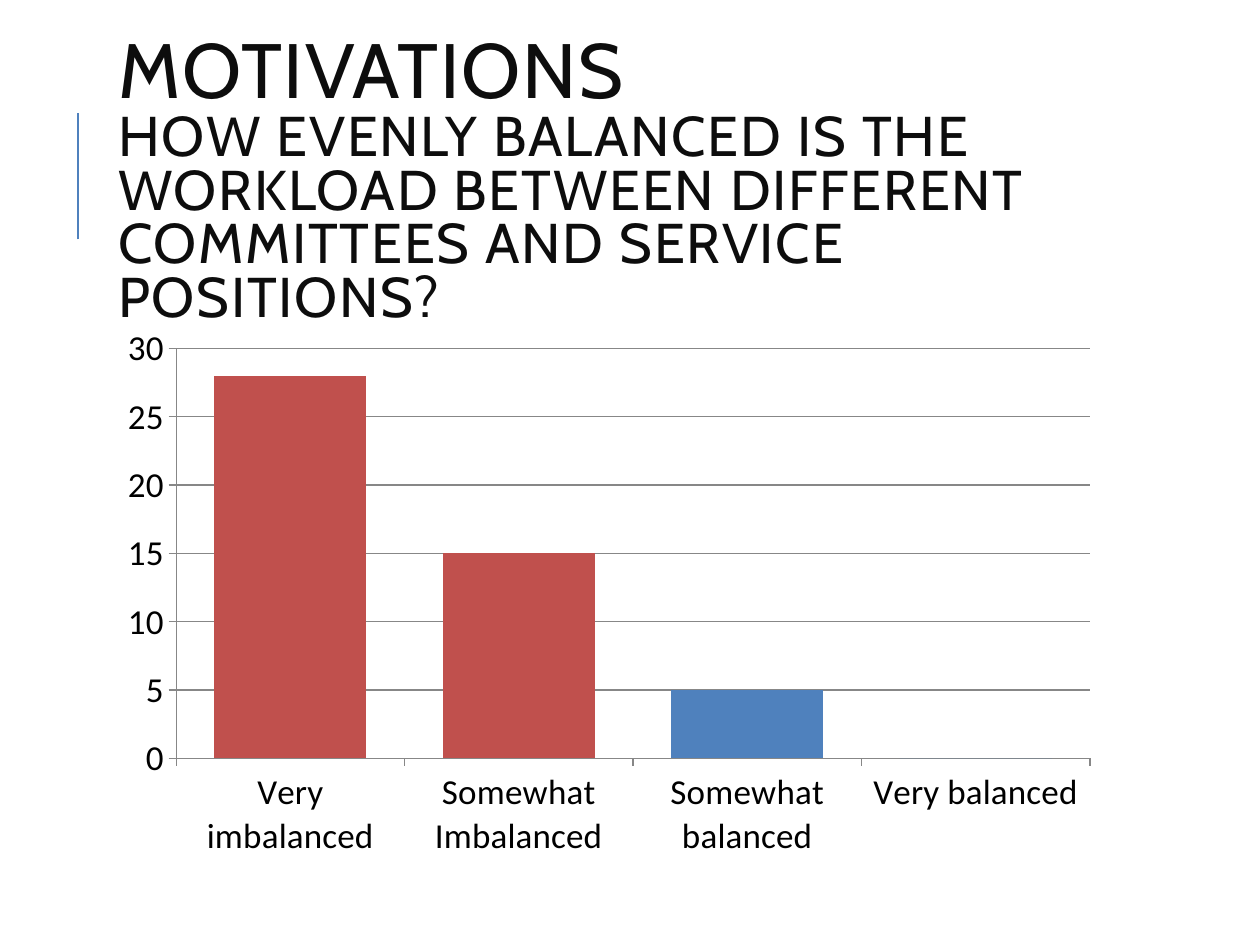
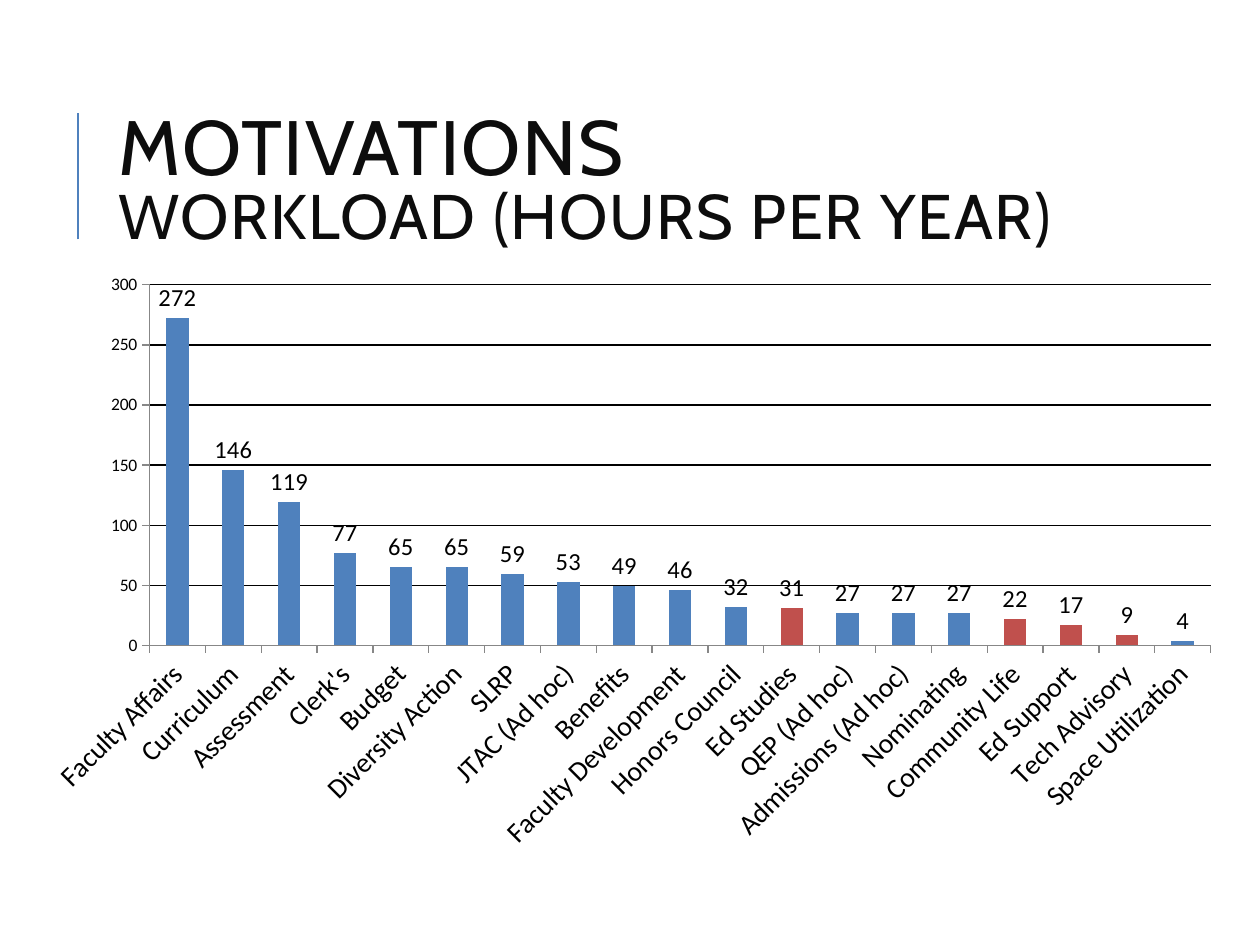
from lxml import etree
from pptx import Presentation
from pptx.chart.data import CategoryChartData
from pptx.dml.color import RGBColor
from pptx.enum import chart as ch, shapes, text
from pptx.oxml import parse_xml
from pptx.oxml.ns import nsdecls, qn
from pptx.util import Inches, Pt

BLUE = RGBColor(0x4F, 0x81, 0xBD)
RED = RGBColor(0xC0, 0x50, 0x4D)
INK = RGBColor(0x0D, 0x0D, 0x0D)
BLACK = RGBColor(0, 0, 0)
GRAY = RGBColor(0x87, 0x87, 0x87)
TITLE_FONT, CHART_FONT = "Cabin", "Calibri"

BALANCE = {
    "Very imbalanced": 28, "Somewhat Imbalanced": 15,
    "Somewhat balanced": 5, "Very balanced": 0,
}
HOURS = {
    "Faculty Affairs": 272, "Curriculum": 146, "Assessment": 119,
    "Clerk's": 77, "Budget": 65, "Diversity Action": 65, "SLRP": 59,
    "JTAC (Ad hoc)": 53, "Benefits": 49, "Faculty Development": 46,
    "Honors Council": 32, "Ed Studies": 31, "QEP (Ad hoc)": 27,
    "Admissions (Ad hoc)": 27, "Nominating": 27, "Community Life": 22,
    "Ed Support": 17, "Tech Advisory": 9, "Space Utilization": 4,
}


def apply(target, **values):
    for name, value in values.items():
        setattr(target, name, value)


def style_font(font, color, **values):
    apply(font, **values)
    font.color.rgb = color


class SlideBuilder:
    """Holds the deck, the shared style and the current slide."""

    def __init__(self):
        self.deck = Presentation()
        apply(self.deck, slide_width=Inches(10), slide_height=Inches(7.5))
        self.page = None

    def new_page(self, subtitle, subtitle_size):
        self.page = self.deck.slides.add_slide(self.deck.slide_layouts[6])
        self.accent_line()
        self.title(subtitle, subtitle_size)

    def accent_line(self):
        x = Inches(0.62)
        line = self.page.shapes.add_connector(
            shapes.MSO_CONNECTOR.STRAIGHT, x, Inches(1.9), x, Inches(0.9))
        line.line.color.rgb = BLUE
        line.line.width = Pt(1.5)
        etree.SubElement(line._element.spPr, qn("a:effectLst"))

    def title(self, subtitle, subtitle_size):
        box = self.page.shapes.add_textbox(
            Inches(0.84), Inches(0.64), Inches(7.97), Inches(1.64))
        frame = box.text_frame
        apply(frame, word_wrap=True, auto_size=text.MSO_AUTO_SIZE.NONE,
              vertical_anchor=text.MSO_ANCHOR.MIDDLE)
        para = frame.paragraphs[0]
        para.line_spacing = 0.8
        self.span(para, "MOTIVATIONS", 44)
        para.add_line_break()
        self.span(para, subtitle, subtitle_size)

    def span(self, para, words, size):
        span = para.add_run()
        span.text = words
        style_font(span.font, INK, name=TITLE_FONT, size=Pt(size))
        span.font._element.set("spc", "100")

    def column_chart(self, values, at, plot, top, step, gap, red,
                     sizes, grid, label_size=None, slanted=False):
        data = CategoryChartData()
        data.categories = list(values)
        data.add_series("Series 1", list(values.values()))
        chart = self.page.shapes.add_chart(
            ch.XL_CHART_TYPE.COLUMN_CLUSTERED, *map(Inches, at), data).chart
        apply(chart, has_legend=False, has_title=False)
        style_font(chart.font, BLACK, name=CHART_FONT, size=Pt(10))
        self.place_plot(chart, plot)

        # Axes and gridlines
        for axis, size in zip((chart.category_axis, chart.value_axis), sizes):
            apply(axis, major_tick_mark=ch.XL_TICK_MARK.OUTSIDE,
                  minor_tick_mark=ch.XL_TICK_MARK.NONE)
            style_font(axis.tick_labels.font, BLACK,
                       name=CHART_FONT, size=Pt(size))
            axis.format.line.color.rgb = GRAY
            axis.format.line.width = Pt(0.75)
        chart.category_axis.has_major_gridlines = False
        apply(chart.value_axis, minimum_scale=0, maximum_scale=top,
              major_unit=step, has_major_gridlines=True)
        grid_line = chart.value_axis.major_gridlines.format.line
        grid_line.color.rgb = grid
        grid_line.width = Pt(0.75)
        if slanted:
            body = chart.category_axis._element.find(
                f"{qn('c:txPr')}/{qn('a:bodyPr')}")
            body.set("rot", "-2700000")

        # Columns, with the highlighted ones in red
        columns = chart.plots[0]
        apply(columns, gap_width=gap, vary_by_categories=False)
        series = columns.series[0]
        series.format.fill.solid()
        series.format.fill.fore_color.rgb = BLUE
        for index, name in enumerate(values):
            if name in red:
                fill = series.points[index].format.fill
                fill.solid()
                fill.fore_color.rgb = RED

        if label_size:
            columns.has_data_labels = True
            labels = columns.data_labels
            apply(labels, show_value=True, number_format="0",
                  number_format_is_linked=False,
                  position=ch.XL_LABEL_POSITION.OUTSIDE_END)
            style_font(labels.font, BLACK,
                       name=CHART_FONT, size=Pt(label_size))

    def place_plot(self, chart, plot):
        area = chart._chartSpace.find(f".//{qn('c:plotArea')}")
        for old in area.findall(qn("c:layout")):
            area.remove(old)
        edges = "".join(f'<c:{key} val="{value}"/>'
                        for key, value in zip("xywh", plot))
        area.insert(0, parse_xml(
            f'<c:layout {nsdecls("c")}><c:manualLayout>'
            '<c:layoutTarget val="inner"/><c:xMode val="edge"/>'
            f'<c:yMode val="edge"/>{edges}</c:manualLayout></c:layout>'))


def main():
    builder = SlideBuilder()

    # Survey answers on balance
    builder.new_page("HOW EVENLY BALANCED IS THE WORKLOAD BETWEEN DIFFERENT "
                     "COMMITTEES AND SERVICE POSITIONS?", 32)
    builder.column_chart(
        BALANCE, at=(0.84, 2.5, 7.97, 4.4), plot=(0.07, 0.06, 0.91, 0.74),
        top=30, step=5, gap=50, red={"Very imbalanced", "Somewhat Imbalanced"},
        sizes=(20, 20), grid=GRAY)

    # Hours by committee
    builder.new_page("WORKLOAD (HOURS PER YEAR)", 36)
    builder.column_chart(
        HOURS, at=(0.23, 2.07, 9.57, 4.77), plot=(0.1, 0.04, 0.88, 0.6),
        top=300, step=50, gap=150,
        red={"Ed Studies", "Community Life", "Ed Support", "Tech Advisory"},
        sizes=(16, 10), grid=BLACK, label_size=14, slanted=True)

    builder.deck.save("out.pptx")


if __name__ == "__main__":
    main()
